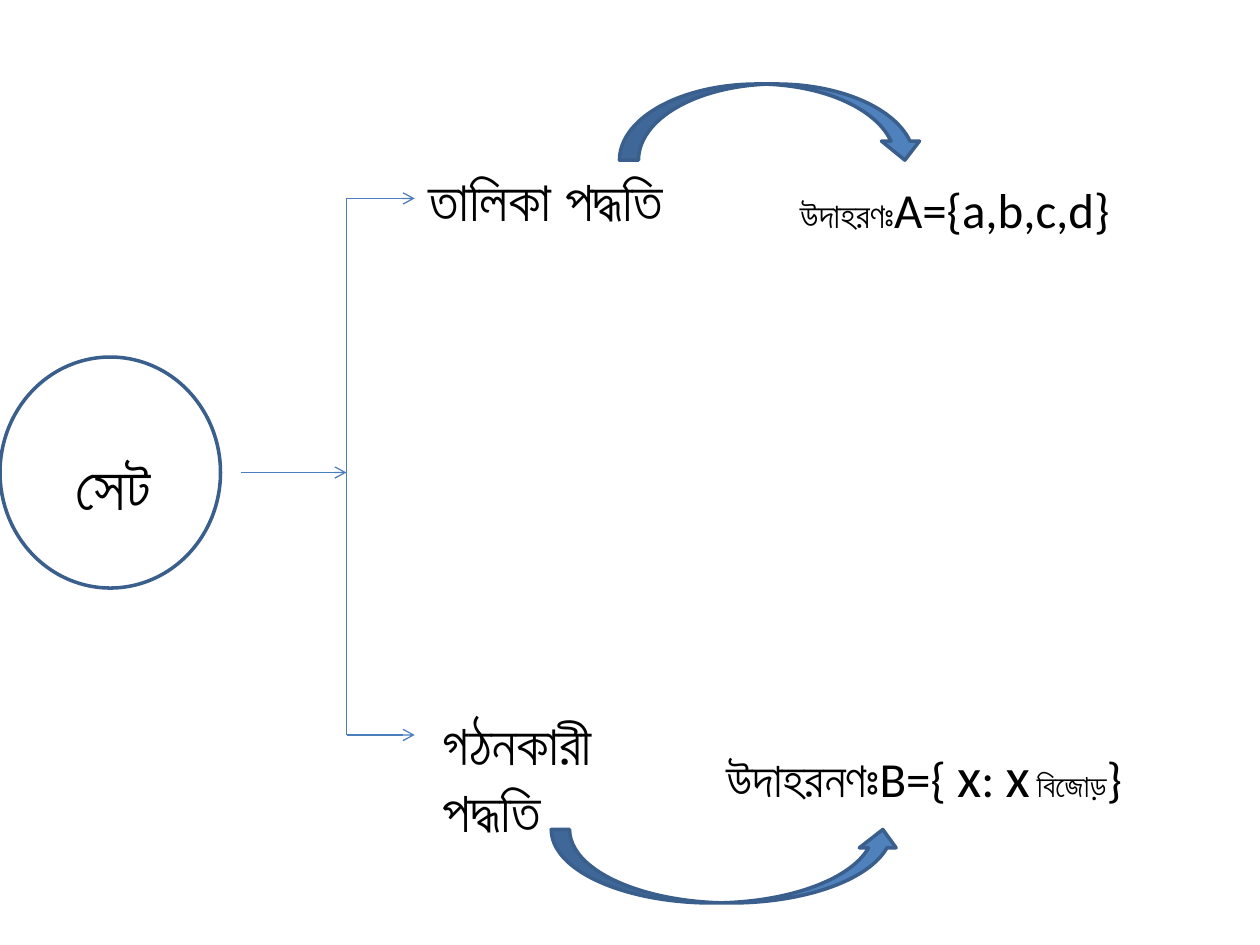
"""Build a slide showing the two ways of describing a set."""
import pptx
import pptx.dml.color
import pptx.enum.shapes
import pptx.enum.text
import pptx.oxml
import pptx.oxml.ns
import pptx.util
from lxml import etree

Pt = pptx.util.Pt
SHAPES = pptx.enum.shapes.MSO_SHAPE
COLOURS = {"text": "000000", "arrow": "4F81BD", "outline": "3A5F8C", "branch": "4B7EBC"}
BENGALI, LATIN = "Roboto", "Calibri"


def colour(name):
    """Return the named colour."""
    return pptx.dml.color.RGBColor.from_string(COLOURS[name])


def add_child(parent, tag, **attributes):
    """Append a DrawingML element to a parent."""
    return etree.SubElement(parent, pptx.oxml.ns.qn(tag), attributes)


def add_outlined(slide, preset, box, fill=None):
    """Add a preset shape with the dark outline."""
    shape = slide.shapes.add_shape(preset, *map(Pt, box))
    shape.shadow.inherit = False
    if fill:
        shape.fill.solid()
        shape.fill.fore_color.rgb = colour(fill)
    else:
        shape.fill.background()
    shape.line.color.rgb = colour("outline")
    shape.line.width = Pt(2)


def add_branch(slide, start, end, arrow=True):
    """Add a thin straight line, with an open arrowhead if wanted."""
    branch = slide.shapes.add_connector(
        pptx.enum.shapes.MSO_CONNECTOR.STRAIGHT, *map(Pt, (*start, *end)))
    branch.line.color.rgb = colour("branch")
    branch.line.width = Pt(0.75)
    if arrow:
        add_child(branch.line._get_or_add_ln(), "a:tailEnd", type="arrow")
    add_child(branch._element.spPr, "a:effectLst")


def add_label(slide, box, pieces):
    """Add a wrapped text box from (text, size, font, bold) pieces."""
    frame = slide.shapes.add_textbox(*map(Pt, box)).text_frame
    frame.word_wrap = True
    frame.auto_size = pptx.enum.text.MSO_AUTO_SIZE.SHAPE_TO_FIT_TEXT
    for text, size, typeface, bold in pieces:
        run = frame.paragraphs[0].add_run()
        run.text = text
        for attribute, value in {"size": Pt(size), "name": typeface, "bold": bold}.items():
            setattr(run.font, attribute, value)
        run.font.color.rgb = colour("text")
        add_child(run._r.get_or_add_rPr(), "a:cs", typeface=typeface)


def main():
    """Build and save the slide."""
    deck = pptx.Presentation()
    deck.slide_width, deck.slide_height = Pt(720), Pt(540)
    slide = deck.slides.add_slide(deck.slide_layouts[6])

    add_outlined(slide, SHAPES.OVAL, (0, 204, 126, 132))
    trunk, top, middle, bottom = 198, 113.4, 270, 420
    add_branch(slide, (138, middle), (trunk, middle))
    add_branch(slide, (trunk, top), (trunk, bottom), arrow=False)
    for level in (top, bottom):
        add_branch(slide, (trunk, level), (237, level))

    labels = [
        ((237.6, 90.8, 156, 46), [("তালিকা পদ্ধতি", 32, BENGALI, False)]),
        ((246, 402, 108, 85), [("গঠনকারী পদ্ধতি", 32, BENGALI, False)]),
        ((450, 98.8, 228, 41), [
            ("উদাহরণঃ", 20, BENGALI, False),
            ("A={a,b,c,d}", 28, LATIN, False)]),
        ((408, 420, 282, 46), [
            ("উদাহরনণঃ", 28, BENGALI, False),
            ("B={ ", 28, LATIN, False),
            ("x", 32, LATIN, False),
            (": ", 28, LATIN, False),
            ("x", 32, LATIN, False),
            (" ", 18, LATIN, False),
            ("বিজোড়", 18, BENGALI, True),
            ("}", 28, LATIN, False)]),
        ((36, 252, 66, 51), [("সেট", 36, BENGALI, False)]),
    ]
    for box, pieces in labels:
        add_label(slide, box, pieces)

    add_outlined(slide, SHAPES.CURVED_DOWN_ARROW, (354, 48, 174, 43.5), "arrow")
    add_outlined(slide, SHAPES.CURVED_UP_ARROW, (315, 474, 200, 42), "arrow")
    deck.save("out.pptx")


if __name__ == "__main__":
    main()
